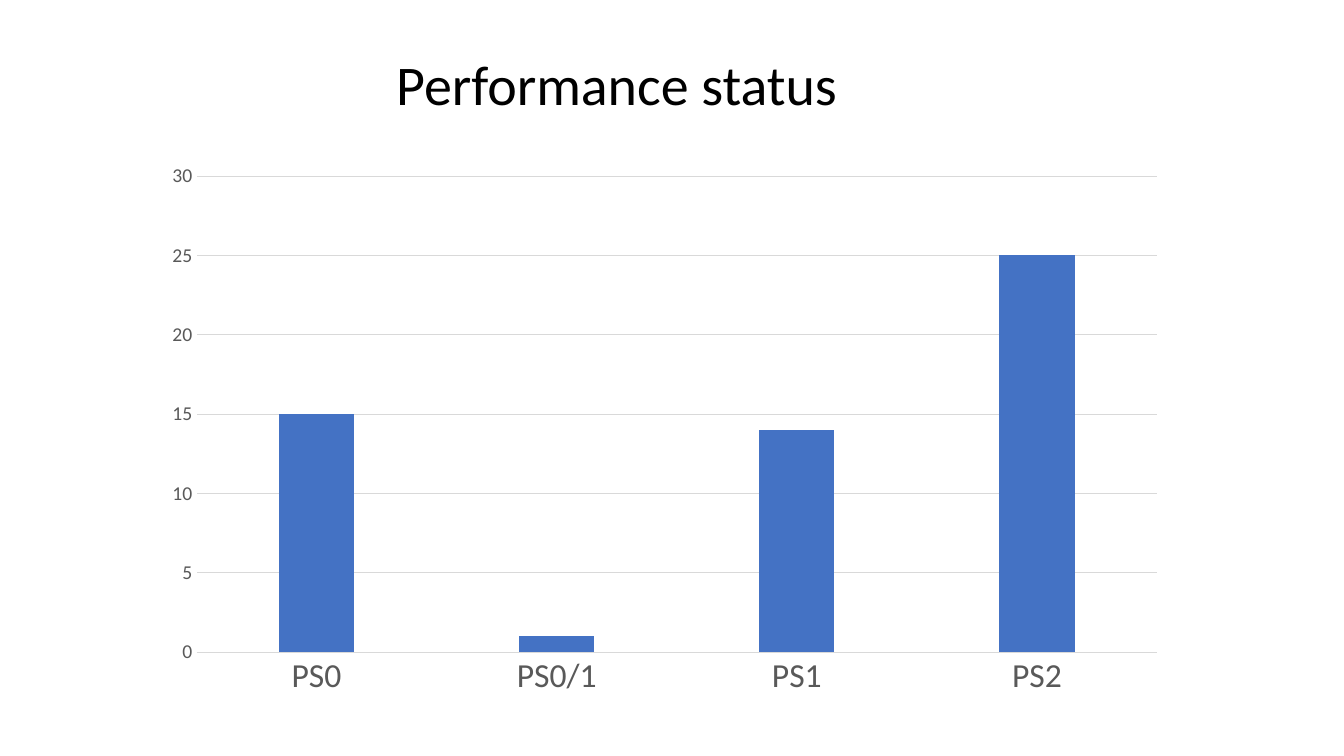
from lxml import etree
from pptx import Presentation
from pptx.chart.data import CategoryChartData
from pptx.dml.color import RGBColor
from pptx.enum.chart import XL_CHART_TYPE, XL_TICK_MARK
from pptx.enum.text import MSO_ANCHOR, PP_ALIGN
from pptx.oxml.ns import qn
from pptx.util import Inches, Pt

FONT = "Calibri"
COLORS = {"title": "000000", "label": "595959", "line": "D9D9D9", "bar": "4472C4"}
PATIENTS = {"PS0": 15, "PS0/1": 1, "PS1": 14, "PS2": 25}


def style_font(font, size, color):
    font.name = FONT
    font.size = Pt(size)
    font.color.rgb = RGBColor.from_string(COLORS[color])


def style_line(line):
    line.color.rgb = RGBColor.from_string(COLORS["line"])
    line.width = Pt(0.75)


def style_axis(axis, size):
    axis.major_tick_mark = axis.minor_tick_mark = XL_TICK_MARK.NONE
    style_font(axis.tick_labels.font, size, "label")


def set_plot_area(chart, **fractions):
    """Fix the inner plot area as fractions (x, y, w, h) of the chart."""
    plot_area = chart.plots[0]._element.getparent()
    for old in plot_area.findall(qn("c:layout")):
        plot_area.remove(old)
    layout = etree.Element(qn("c:layout"))
    manual = etree.SubElement(layout, qn("c:manualLayout"))
    settings = {"layoutTarget": "inner", "xMode": "edge", "yMode": "edge", **fractions}
    for name, value in settings.items():
        etree.SubElement(manual, qn(f"c:{name}")).set("val", str(value))
    plot_area.insert(0, layout)


def add_status_chart(page):
    data = CategoryChartData()
    data.categories = list(PATIENTS)
    data.add_series("Series 1", list(PATIENTS.values()))
    frame = page.shapes.add_chart(
        XL_CHART_TYPE.COLUMN_CLUSTERED,
        Inches(1.39), Inches(0.47), Inches(10.55), Inches(6.55), data)
    chart = frame.chart
    chart.has_title = False
    chart.has_legend = False
    style_font(chart.font, 10, "title")

    style_axis(chart.category_axis, 24)
    style_line(chart.category_axis.format.line)
    values = chart.value_axis
    style_axis(values, 14)
    values.minimum_scale, values.maximum_scale, values.major_unit = 0, 30, 5
    values.format.line.fill.background()
    style_line(values.major_gridlines.format.line)

    plot = chart.plots[0]
    plot.gap_width, plot.overlap = 219, -27
    plot.vary_by_categories = False
    bars = plot.series[0].format.fill
    bars.solid()
    bars.fore_color.rgb = RGBColor.from_string(COLORS["bar"])
    set_plot_area(chart, x=0.053, y=0.195, w=0.903, h=0.721)
    return frame


def set_title(page, text):
    title = page.shapes.title
    title.left, title.top = Inches(3.83), Inches(0.44)
    title.width, title.height = Inches(4.77), Inches(0.77)
    title.text_frame.vertical_anchor = MSO_ANCHOR.TOP
    title.text_frame.word_wrap = True
    para = title.text_frame.paragraphs[0]
    para.alignment = PP_ALIGN.LEFT
    span = para.add_run()
    span.text = text
    style_font(span.font, 40, "title")
    return title


def main():
    deck = Presentation()
    deck.slide_width, deck.slide_height = Inches(13.33), Inches(7.5)
    page = deck.slides.add_slide(deck.slide_layouts[5])
    title = set_title(page, "Performance status")
    frame = add_status_chart(page)
    # The chart frame reaches behind the title, so the title goes on top.
    frame._element.addnext(title._element)
    deck.save("out.pptx")


if __name__ == "__main__":
    main()
